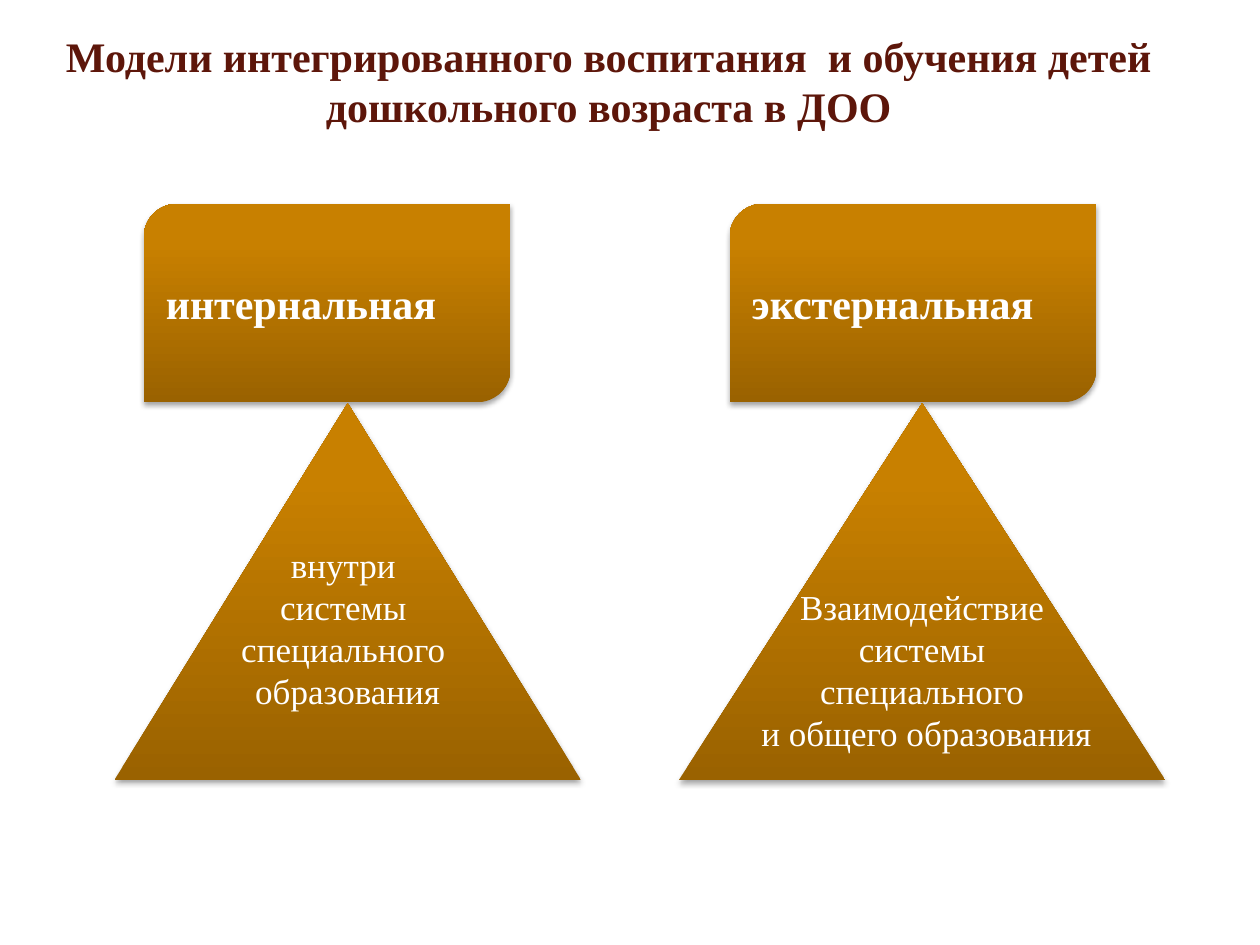
"""Build the slide on two models of integrated preschool education."""
from copy import deepcopy

from lxml import etree
from pptx import Presentation
from pptx.dml.color import RGBColor
from pptx.enum.shapes import MSO_SHAPE
from pptx.enum.text import MSO_ANCHOR, PP_ALIGN
from pptx.oxml.ns import qn
from pptx.util import Cm, Pt

DIAGONAL_ROUND = MSO_SHAPE.ROUND_2_DIAG_RECTANGLE
TRIANGLE = MSO_SHAPE.ISOSCELES_TRIANGLE
MIDDLE, BOTTOM = MSO_ANCHOR.MIDDLE, MSO_ANCHOR.BOTTOM
LEFT, CENTER = PP_ALIGN.LEFT, PP_ALIGN.CENTER

FONT = "Times New Roman"
MAROON = RGBColor(0x5D, 0x16, 0x0A)
WHITE = RGBColor(0xFF, 0xFF, 0xFF)
DARK_OCHRE = RGBColor(0x9A, 0x62, 0x00)
OCHRE = RGBColor(0xC8, 0x80, 0x00)
LIGHT_OCHRE = RGBColor(0xC9, 0x80, 0x00)
GRADIENT = [(0, DARK_OCHRE), (0.8, OCHRE), (1, LIGHT_OCHRE)]


def write_text(shape, text, size, color, bold, alignment, anchor):
    text_frame = shape.text_frame
    text_frame.text = text
    text_frame.vertical_anchor = anchor
    for paragraph in text_frame.paragraphs:
        paragraph.alignment = alignment
        for run in paragraph.runs:
            run.font.name = FONT
            run.font.size = Pt(size)
            run.font.bold = bold
            run.font.color.rgb = color


def add_ochre_shape(slide, kind, left, top, width, height):
    shape = slide.shapes.add_shape(kind, Cm(left), Cm(top), Cm(width), Cm(height))
    shape.line.fill.background()
    shape.text_frame.word_wrap = False

    shape.fill.gradient()
    shape.fill.gradient_angle = 90
    stop_list = shape._element.spPr.find(qn("a:gradFill")).find(qn("a:gsLst"))
    stop_list.append(deepcopy(stop_list[-1]))
    for stop, (position, color) in zip(shape.fill.gradient_stops, GRADIENT):
        stop.position = position
        stop.color.rgb = color

    shape.shadow.inherit = False
    effects = shape._element.spPr.find(qn("a:effectLst"))
    shadow = etree.SubElement(
        effects, qn("a:outerShdw"), blurRad=str(Pt(3.1)), dist=str(Pt(1.8)),
        dir="5400000", rotWithShape="0")
    shadow_color = etree.SubElement(shadow, qn("a:srgbClr"), val="000000")
    etree.SubElement(shadow_color, qn("a:alpha"), val="35000")
    return shape


presentation = Presentation()
presentation.slide_width = Cm(25.4)
presentation.slide_height = Cm(19.05)
slide = presentation.slides.add_slide(presentation.slide_layouts[5])

title = slide.shapes.title
title.left, title.top, title.width, title.height = Cm(0.84), Cm(0.64), Cm(22.86), Cm(1.98)
write_text(title, "Модели интегрированного воспитания  и обучения детей дошкольного возраста в ДОО",
           24, MAROON, True, CENTER, MIDDLE)

models = [
    ("интернальная", 2.9,
     "внутри \nсистемы \nспециального \nобразования", 2.31, 9.4, 1.37),
    ("экстернальная", 14.71,
     "Взаимодействие\n системы \nспециального\n и общего образования", 13.69, 9.8, 0.53),
]
for name, name_left, description, triangle_left, triangle_width, bottom_margin in models:
    name_box = add_ochre_shape(slide, DIAGONAL_ROUND, name_left, 4.11, 7.39, 4)
    write_text(name_box, name, 24, WHITE, True, LEFT, MIDDLE)

    triangle = add_ochre_shape(slide, TRIANGLE, triangle_left, 8.13, triangle_width, 7.59)
    write_text(triangle, description, 20, WHITE, False, CENTER, BOTTOM)
    triangle.text_frame.margin_top = Cm(0)
    triangle.text_frame.margin_bottom = Cm(bottom_margin)

presentation.save("out.pptx")
